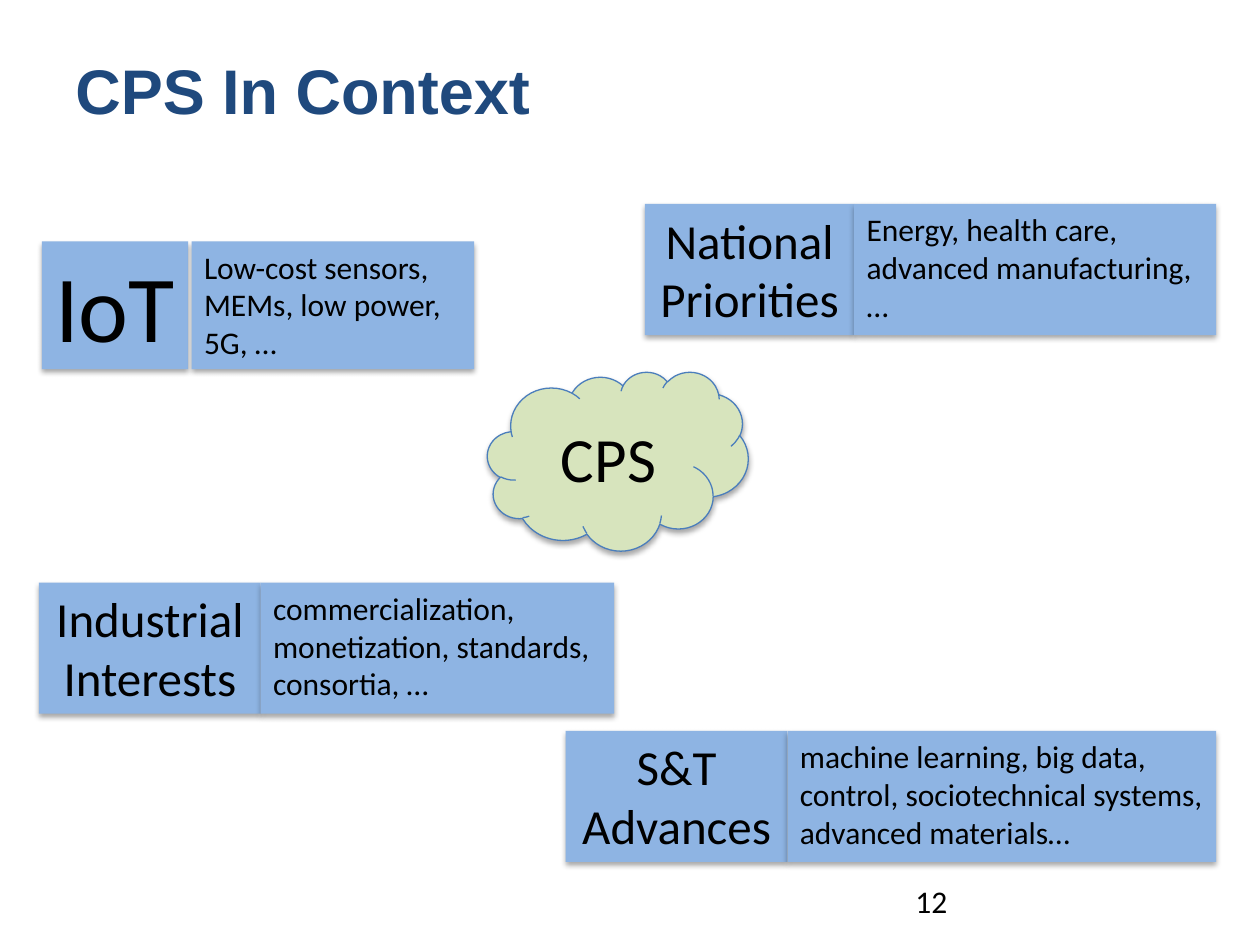
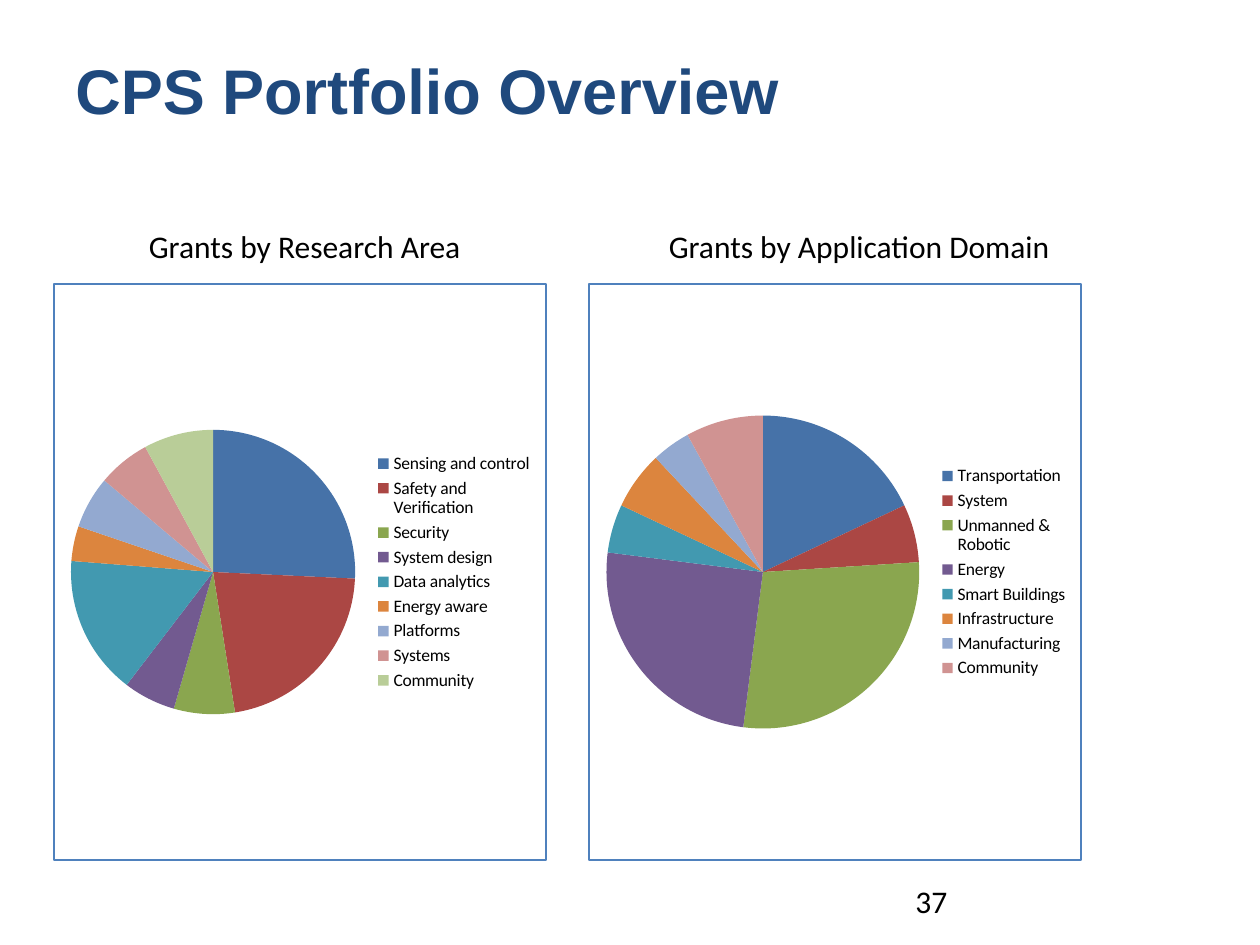
from lxml import etree
from pptx import Presentation
from pptx.chart.data import CategoryChartData
from pptx.dml.color import RGBColor
from pptx.enum import chart as ch, shapes, text
from pptx.oxml import parse_xml
from pptx.oxml.ns import nsdecls, qn
from pptx.util import Pt

COLORS = {
    "title": "1F497D", "ink": "000000", "card": "8EB4E3",
    "cloud": "D7E4BD", "cloud_line": "4B7EBC", "chart_border": "4F81BD",
}
SLICES = ["4672A8", "AB4744", "8AA64F", "725A90", "4299B0",
          "DC853E", "93A9D0", "D09392", "B9CD98"]
LEFT, CENTER = text.PP_ALIGN.LEFT, text.PP_ALIGN.CENTER
TOP, MIDDLE = text.MSO_ANCHOR.TOP, text.MSO_ANCHOR.MIDDLE


def rgb(name):
    return RGBColor.from_string(COLORS[name])


def write(sp, words, size=18, font="Calibri", color="ink", bold=False,
          align=LEFT, anchor=TOP, wrap=True):
    """Fill a shape with one formatted paragraph."""
    tf = sp.text_frame
    tf.word_wrap = wrap
    tf.vertical_anchor = anchor
    p = tf.paragraphs[0]
    p.text = words
    p.alignment = align
    for r in p.runs:
        r.font.size, r.font.name, r.font.bold = Pt(size), font, bold
        r.font.color.rgb = rgb(color)


def add_text(s, box, words, **fmt):
    write(s.shapes.add_textbox(*map(Pt, box)), words, **fmt)


def add_panel(s, kind, box, fill, line=None):
    """Filled shape with a soft shadow straight below it."""
    sp = s.shapes.add_shape(kind, *map(Pt, box))
    sp.fill.solid()
    sp.fill.fore_color.rgb = rgb(fill)
    if line:
        sp.line.color.rgb = rgb(line)
        sp.line.width = Pt(0.75)
    else:
        sp.line.fill.background()
    sp.shadow.inherit = False
    effects = sp._element.spPr.find(qn("a:effectLst"))
    shadow = etree.SubElement(effects, qn("a:outerShdw"), blurRad=str(Pt(3.15)),
                              dist=str(Pt(1.8)), dir="5400000", rotWithShape="0")
    tint = etree.SubElement(shadow, qn("a:srgbClr"), val=COLORS["ink"])
    etree.SubElement(tint, qn("a:alpha"), val="35000")
    return sp


def add_base(prs, title, number):
    """Slide with the shared title and page number."""
    s = prs.slides.add_slide(prs.slide_layouts[6])
    add_text(s, (36, 6, 648, 90), title, size=36, font="Arial",
             color="title", bold=True, anchor=MIDDLE)
    add_text(s, (516, 500.4, 168, 28.8), number)
    return s


def add_card(s, box, label, detail, label_w, size=28, gap=0):
    """Label on the left, its details filling the rest of the box."""
    x, y, w, h = box
    rect = shapes.MSO_SHAPE.RECTANGLE
    sp = add_panel(s, rect, (x, y, label_w, h), "card")
    write(sp, label, size=size, align=CENTER, wrap=False)
    used = label_w + gap
    sp = add_panel(s, rect, (x + used, y, w - used, h), "card")
    write(sp, detail)


def add_pie(s, box, caption, caption_box, shares):
    """Caption above a bordered pie with its legend on the right."""
    add_text(s, caption_box, caption, wrap=False)
    data = CategoryChartData()
    data.categories = list(shares)
    data.add_series("Series 1", list(shares.values()))
    chart = s.shapes.add_chart(ch.XL_CHART_TYPE.PIE, *map(Pt, box), data).chart
    chart.has_title = False
    chart.font.size, chart.font.name = Pt(10), "Calibri"
    chart.font.color.rgb = rgb("ink")
    chart.has_legend = True
    chart.legend.position = ch.XL_LEGEND_POSITION.RIGHT
    chart.legend.include_in_layout = False
    plot = chart.plots[0]
    plot.vary_by_categories = True
    for i in range(len(shares)):
        fill = plot.series[0].points[i].format.fill
        fill.solid()
        fill.fore_color.rgb = RGBColor.from_string(SLICES[i])
    # Frame around the chart area
    border = parse_xml(
        f'<c:spPr {nsdecls("c", "a")}><a:noFill/><a:ln w="{Pt(1)}"><a:solidFill>'
        f'<a:srgbClr val="{COLORS["chart_border"]}"/></a:solidFill></a:ln></c:spPr>')
    chart._chartSpace.find(qn("c:chart")).addnext(border)


def context_slide(prs):
    s = add_base(prs, "CPS In Context", "12")
    # Central cloud
    cloud = add_panel(s, shapes.MSO_SHAPE.CLOUD, (278.6, 212.4, 149, 102.2),
                      "cloud", "cloud_line")
    write(cloud, "CPS", size=36, align=CENTER, anchor=MIDDLE)
    # Influences around it
    add_card(s, (24, 138, 247, 73), "IoT",
             "Low-cost sensors, MEMs, low power, 5G, …", 83.5, size=54, gap=2)
    add_card(s, (368.6, 116.5, 326.4, 75), "National\nPriorities",
             "Energy, health care, advanced manufacturing, …", 119.5)
    add_card(s, (323.3, 417.6, 371.7, 75), "S&T\nAdvances",
             "machine learning, big data, control, sociotechnical systems, "
             "advanced materials…", 126.7)
    add_card(s, (22.3, 332.9, 328.7, 75), "Industrial\nInterests",
             "commercialization, monetization, standards, consortia, …", 126.7)


def portfolio_slide(prs):
    s = add_base(prs, "CPS Portfolio Overview", "37")
    add_pie(s, (30.2, 162, 282.2, 329.8), "Grants by Research Area",
            (78, 126, 194.4, 28.8), {
                "Sensing and control": 26, "Safety and Verification": 22,
                "Security": 7, "System design": 6, "Data analytics": 16,
                "Energy aware": 4, "Platforms": 6, "Systems": 6, "Community": 8})
    add_pie(s, (336.2, 162, 282.2, 329.8), "Grants by Application Domain",
            (375.1, 126, 234.7, 28.8), {
                "Transportation": 18, "System": 6, "Unmanned & Robotic": 28,
                "Energy": 25, "Smart Buildings": 5, "Infrastructure": 6,
                "Manufacturing": 4, "Community": 8})


def main():
    prs = Presentation()
    prs.slide_width, prs.slide_height = Pt(720), Pt(540)
    context_slide(prs)
    portfolio_slide(prs)
    prs.save("out.pptx")


if __name__ == "__main__":
    main()
